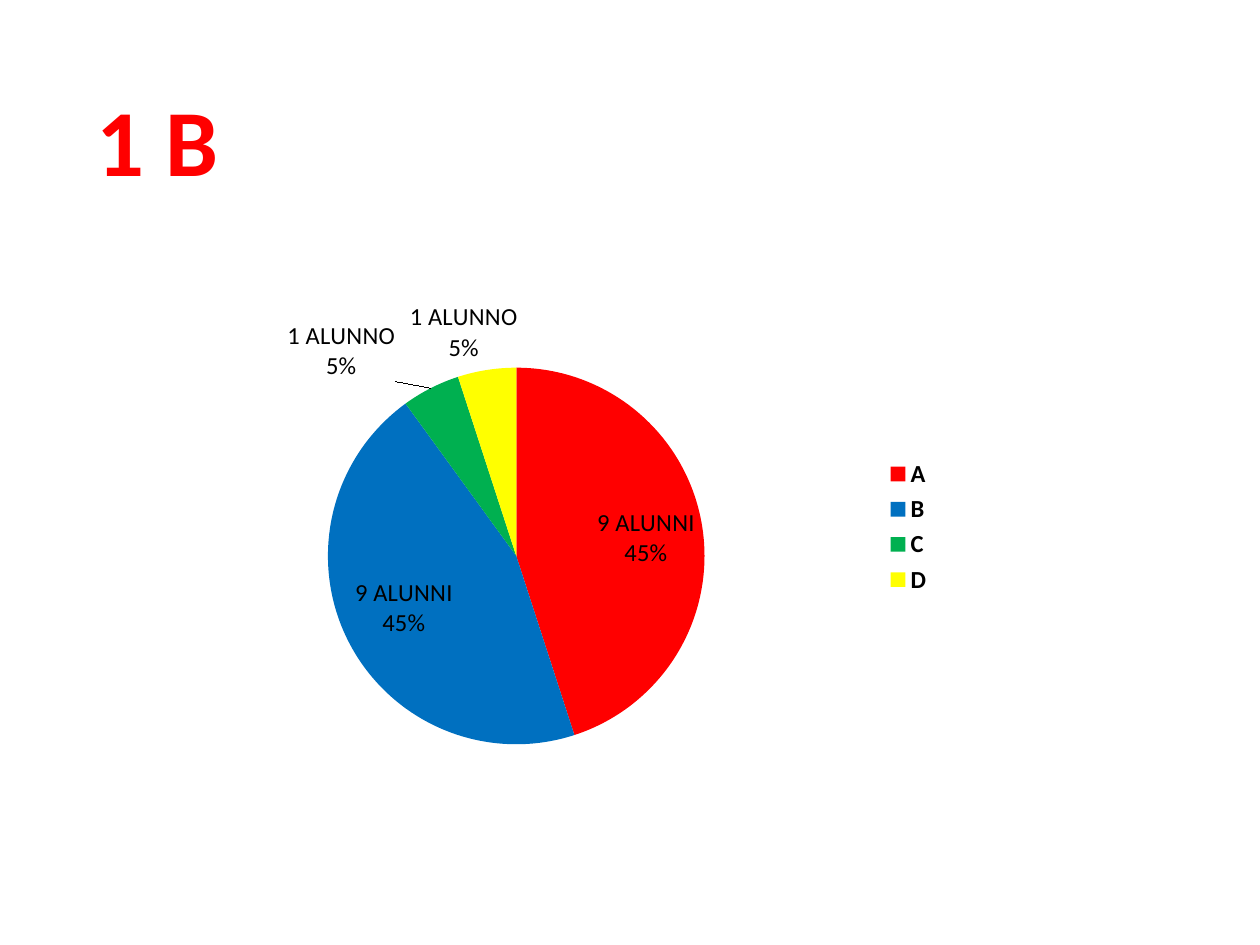
from dataclasses import dataclass

from lxml.etree import SubElement
from pptx import Presentation
from pptx.chart.data import CategoryChartData
from pptx.dml.color import RGBColor as RGB
from pptx.enum.chart import XL_CHART_TYPE as ChartType
from pptx.enum.chart import XL_LABEL_POSITION as LabelPos
from pptx.enum.chart import XL_LEGEND_POSITION as LegendPos
from pptx.oxml.ns import qn
from pptx.util import Inches, Pt


@dataclass(frozen=True)
class Theme:
    font: str = "Calibri"
    heading_color: str = "FF0000"
    text_color: str = "000000"
    slice_colors: tuple = ("FF0000", "0070C0", "00B050", "FFFF00")
    heading_size: int = 54
    chart_size: int = 10
    label_size: int = 14


THEME = Theme()
WIDTH, HEIGHT = 10, 7.5

CLASS_NAME = "1 B"
GRADES = [
    ("A", 9, "ALUNNI", LabelPos.INSIDE_END, (0, -0.04)),
    ("B", 9, "ALUNNI", LabelPos.INSIDE_END, None),
    ("C", 1, "ALUNNO", LabelPos.OUTSIDE_END, (-0.04, 0)),
    ("D", 1, "ALUNNO", LabelPos.OUTSIDE_END, (0.04, 0)),
]
HEADING_BOX = (0.067, 0.08, 0.173, 0.135)
CHART_BOX = (0.114, 0.3, 0.636, 0.515)
PIE_AREA = {"x": 0.23, "y": 0.17, "w": 0.47, "h": 0.78}


def place(shares):
    return [Inches(share * side) for share, side in zip(shares, (WIDTH, HEIGHT) * 2)]


def style(font, size, color=THEME.text_color, bold=False):
    font.name, font.size, font.bold = THEME.font, Pt(size), bold
    font.color.rgb = RGB.from_string(color)


def set_layout(parent, index, settings):
    for old in parent.findall(qn("c:layout")):
        parent.remove(old)
    layout = SubElement(parent, qn("c:layout"))
    parent.insert(index, layout)
    manual = SubElement(layout, qn("c:manualLayout"))
    for tag, setting in settings.items():
        SubElement(manual, qn(f"c:{tag}")).set("val", str(setting))


def add_heading(slide):
    heading = slide.shapes.add_textbox(*place(HEADING_BOX)).text_frame
    heading.word_wrap = True
    heading.text = CLASS_NAME
    style(heading.paragraphs[0].runs[0].font, THEME.heading_size,
          THEME.heading_color, True)


def label_slice(point, text, position, offset):
    label = point.data_label
    label.text_frame.text = text
    for line in label.text_frame.paragraphs:
        style(line.runs[0].font, THEME.label_size)
    label.position = position
    if offset:
        entry = point._element.xpath("c:dLbls/c:dLbl")[-1]
        set_layout(entry, 1, dict(zip("xy", offset)))


def add_grades(slide):
    names, counts = zip(*[grade[:2] for grade in GRADES])
    grades = CategoryChartData()
    grades.categories = names
    grades.add_series("Series 1", counts)
    chart = slide.shapes.add_chart(ChartType.PIE, *place(CHART_BOX), grades).chart
    chart.has_title = False
    style(chart.font, THEME.chart_size)

    chart.has_legend = True
    chart.legend.position = LegendPos.RIGHT
    chart.legend.include_in_layout = False
    style(chart.legend.font, THEME.label_size, bold=True)

    pie = chart.plots[0]
    pie.vary_by_categories = True
    points = pie.series[0].points
    for index, (_, count, unit, position, offset) in enumerate(GRADES):
        fill = points[index].format.fill
        fill.solid()
        fill.fore_color.rgb = RGB.from_string(THEME.slice_colors[index])
        text = f"{count} {unit}\n{count / sum(counts):.0%}"
        label_slice(points[index], text, position, offset)

    labels = pie.series[0].data_labels
    labels.show_value = labels.show_percentage = True
    style(labels.font, THEME.label_size, bold=True)

    set_layout(chart._chartSpace.chart.plotArea, 0,
               {"layoutTarget": "inner", "xMode": "edge", "yMode": "edge", **PIE_AREA})


def main():
    deck = Presentation()
    deck.slide_width, deck.slide_height = Inches(WIDTH), Inches(HEIGHT)
    slide = deck.slides.add_slide(deck.slide_layouts[6])
    add_heading(slide)
    add_grades(slide)
    deck.save("out.pptx")


if __name__ == "__main__":
    main()
